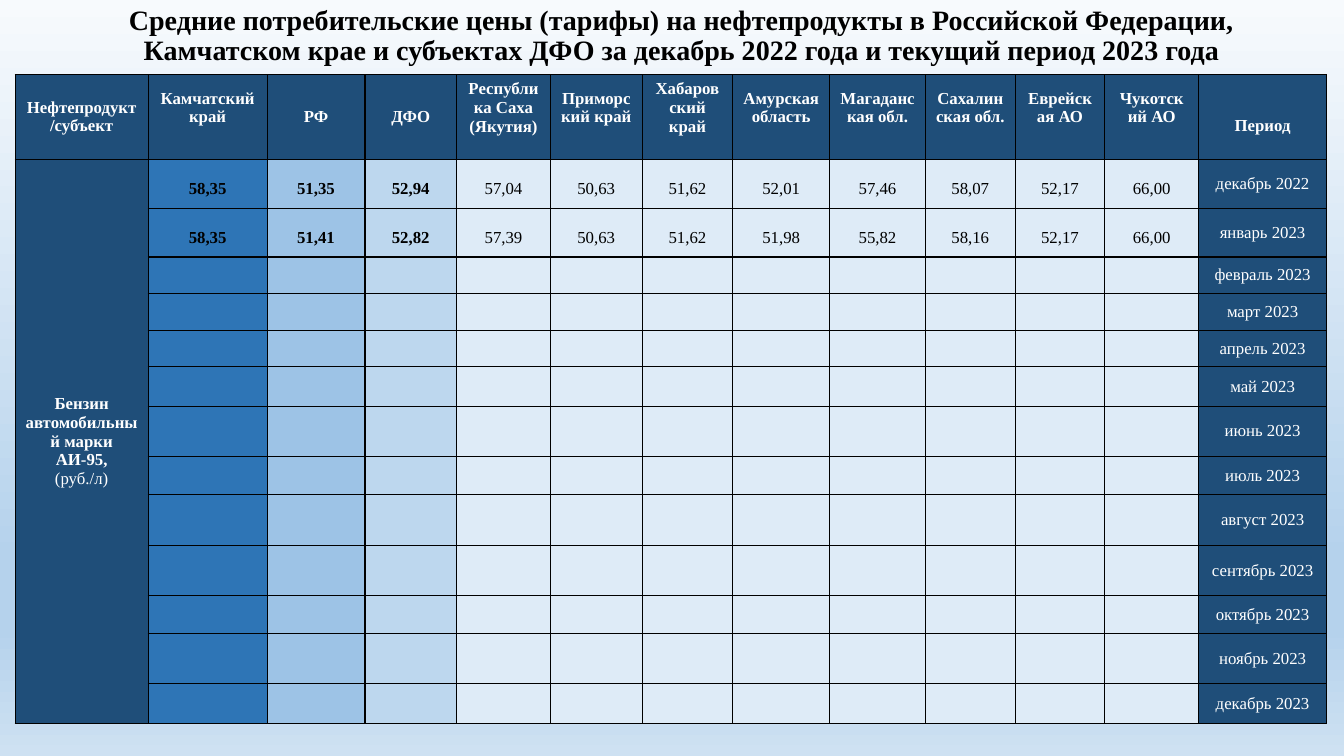
from lxml import etree
from pptx import Presentation
from pptx.dml.color import RGBColor
from pptx.enum import text
from pptx.oxml import ns
from pptx.util import Inches, Pt

HEADING = ("Средние потребительские цены (тарифы) на нефтепродукты в Российской Федерации, "
           "Камчатском крае и субъектах ДФО за декабрь 2022 года и текущий период 2023 года")
REGIONS = ["Камчатский край", "РФ", "ДФО", "Республика Саха (Якутия)", "Приморский край",
           "Хабаровский край", "Амурская область", "Магаданская обл.", "Сахалинская обл.",
           "Еврейская АО", "Чукотский АО"]
COLUMNS = ["Нефтепродукт/субъект", *REGIONS, "Период"]
PRODUCT = [("Бензин автомобильный марки", True), ("АИ-95,", True), ("(руб./л)", False)]
PERIODS = ["декабрь 2022", "январь 2023", "февраль 2023", "март 2023", "апрель 2023",
           "май 2023", "июнь 2023", "июль 2023", "август 2023", "сентябрь 2023",
           "октябрь 2023", "ноябрь 2023", "декабрь 2023"]
PRICES = [
    ["58,35", "51,35", "52,94", "57,04", "50,63", "51,62", "52,01", "57,46", "58,07", "52,17", "66,00"],
    ["58,35", "51,41", "52,82", "57,39", "50,63", "51,62", "51,98", "55,82", "58,16", "52,17", "66,00"],
]
WIDTHS = [1.32, 1.18, 0.97, 0.91, 0.93, 0.91, 0.9, 0.96, 0.95, 0.89, 0.89, 0.93, 1.27]
HEIGHTS = [0.84, 0.49, 0.48, 0.36, 0.37, 0.36, 0.39, 0.5, 0.38, 0.5, 0.5, 0.38, 0.49, 0.4]
CENTRED_HEADS = {"Нефтепродукт/субъект", "РФ", "ДФО"}
LINE_GAP = 0.23

THEME = {
    "font": "Times New Roman", "title": 20, "body": 12, "border": 1,
    "ink": "000000", "light": "FFFFFF", "navy": "1F4E79",
    "regions": ["2E75B6", "9DC3E6", "BDD7EE"] + ["DEEBF7"] * 8,
    "background": [(0, "F7FAFD"), (74, "B5D2EC"), (83, "B5D2EC"), (100, "CEE1F2")],
}


def apply(target, values):
    for name, value in values.items():
        setattr(target, name, value)


def write(paragraph, words, size, color, bold, spacing=1.0):
    apply(paragraph, {"alignment": text.PP_ALIGN.CENTER, "line_spacing": spacing,
                      "space_before": Pt(0), "space_after": Pt(0)})
    run = paragraph.add_run()
    run.text = words
    apply(run.font, {"name": THEME["font"], "size": Pt(size), "bold": bold})
    run.font.color.rgb = RGBColor.from_string(color)


def paint_background(slide):
    fill = slide.background.fill
    fill.gradient()
    fill.gradient_angle = 270
    stops = next(slide.element.iter(ns.qn("a:gsLst")))
    for stop in list(stops):
        stops.remove(stop)
    for position, color in THEME["background"]:
        stop = etree.SubElement(stops, ns.qn("a:gs"), pos=str(position * 1000))
        etree.SubElement(stop, ns.qn("a:srgbClr"), val=color)


def style_cell(cell, color):
    apply(cell, {"vertical_anchor": text.MSO_ANCHOR.MIDDLE,
                 "margin_left": Inches(0.1), "margin_right": Inches(0.1),
                 "margin_top": Inches(0.05), "margin_bottom": Inches(0.05)})
    cell.fill.solid()
    cell.fill.fore_color.rgb = RGBColor.from_string(color)
    properties = cell._tc.get_or_add_tcPr()
    for index, side in enumerate(("lnL", "lnR", "lnT", "lnB")):
        line = etree.Element(ns.qn(f"a:{side}"), w=str(Pt(THEME["border"])))
        solid = etree.SubElement(line, ns.qn("a:solidFill"))
        etree.SubElement(solid, ns.qn("a:srgbClr"), val=THEME["ink"])
        properties.insert(index, line)


def add_prices(slide):
    frame = slide.shapes.add_table(len(HEIGHTS), len(WIDTHS), Inches(0.15), Inches(0.74),
                                   Inches(sum(WIDTHS)), Inches(sum(HEIGHTS)))
    prices = frame.table
    apply(prices, {"first_row": False, "horz_banding": False})
    for column, width in zip(prices.columns, WIDTHS):
        column.width = Inches(width)
    for row, height in zip(prices.rows, HEIGHTS):
        row.height = Inches(height)

    fills = [THEME["navy"], *THEME["regions"], THEME["navy"]]
    for row_index, row in enumerate(prices.rows):
        for cell, fill in zip(row.cells, fills):
            style_cell(cell, fill if row_index else THEME["navy"])

    body, light = THEME["body"], THEME["light"]
    for column, head in enumerate(COLUMNS):
        cell = prices.cell(0, column)
        write(cell.text_frame.paragraphs[0], head, body, light, True)
        if head == "Период":
            cell.margin_top = Inches(LINE_GAP)
        elif head not in CENTRED_HEADS:
            cell.margin_bottom = Inches(LINE_GAP)

    for row, values in enumerate(PRICES, 1):
        for column, price in enumerate(values, 1):
            write(prices.cell(row, column).text_frame.paragraphs[0], price, body,
                  THEME["ink"], column <= 3, 1.5)
    for row, period in enumerate(PERIODS, 1):
        write(prices.cell(row, len(COLUMNS) - 1).text_frame.paragraphs[0], period, body, light, False)

    product = prices.cell(1, 0)
    product.merge(prices.cell(len(PERIODS), 0))
    for index, (words, bold) in enumerate(PRODUCT):
        lines = product.text_frame
        write(lines.add_paragraph() if index else lines.paragraphs[0], words, body, light, bold)

    for paragraph in frame._element.iter(ns.qn("a:p")):
        if paragraph.find(ns.qn("a:r")) is None:
            etree.SubElement(paragraph, ns.qn("a:endParaRPr"), sz=str(body * 100))


def main():
    deck = Presentation()
    apply(deck, {"slide_width": Inches(13.33), "slide_height": Inches(7.5)})
    slide = deck.slides.add_slide(deck.slide_layouts[5])
    paint_background(slide)
    heading = slide.shapes.title
    apply(heading, {"left": Inches(0.95), "top": Inches(-0.02),
                    "width": Inches(11.62), "height": Inches(0.77)})
    apply(heading.text_frame, {"word_wrap": True, "auto_size": text.MSO_AUTO_SIZE.NONE,
                               "vertical_anchor": text.MSO_ANCHOR.MIDDLE})
    write(heading.text_frame.paragraphs[0], HEADING, THEME["title"], THEME["ink"], True, 0.9)
    add_prices(slide)
    deck.save("out.pptx")


if __name__ == "__main__":
    main()
